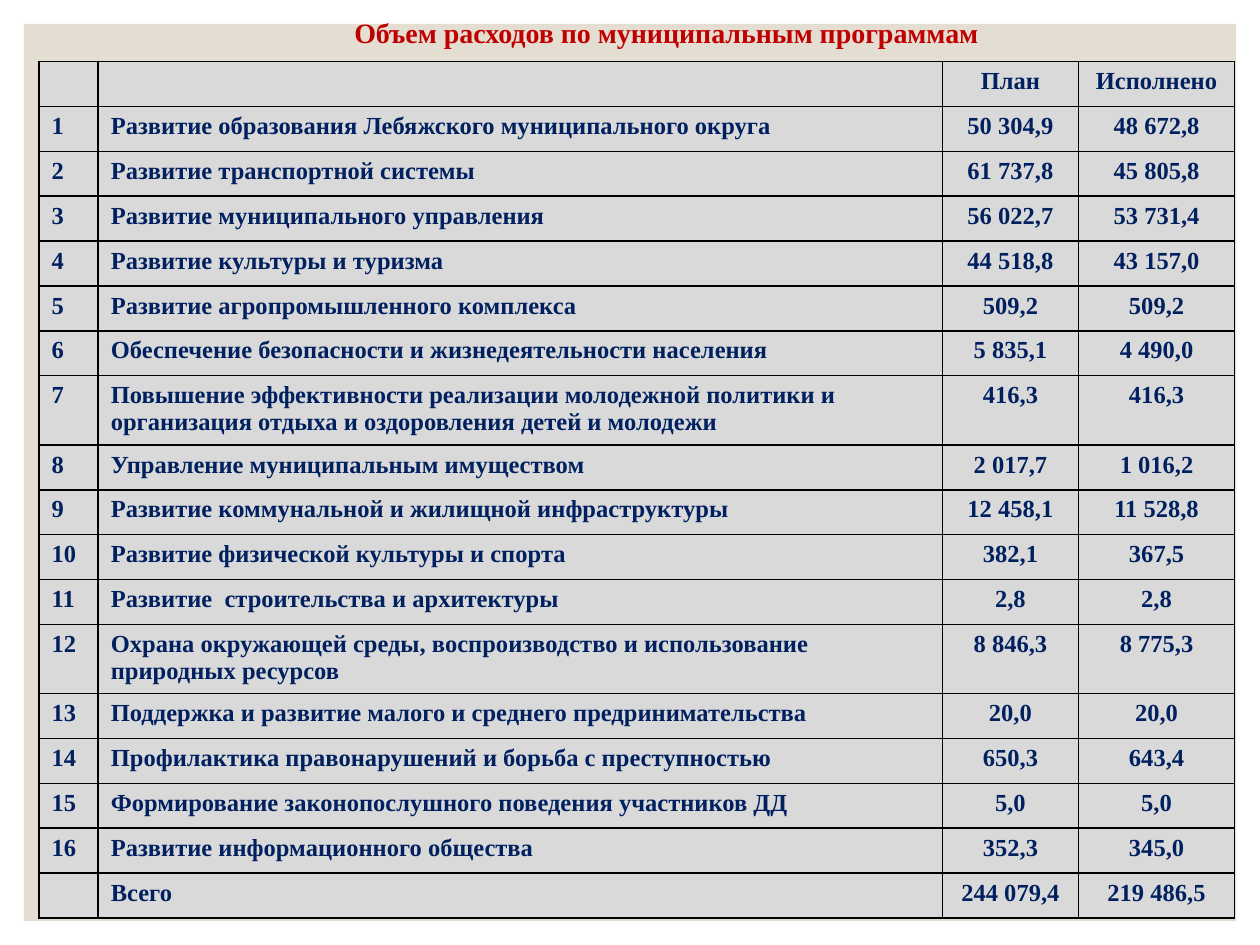
from dataclasses import dataclass

from lxml import etree
from pptx import Presentation
from pptx.dml.color import RGBColor
from pptx.enum.shapes import MSO_SHAPE
from pptx.enum.text import PP_ALIGN
from pptx.oxml.ns import qn
from pptx.util import Inches, Pt

RECTANGLE = MSO_SHAPE.RECTANGLE
LEFT, CENTER = PP_ALIGN.LEFT, PP_ALIGN.CENTER


@dataclass(frozen=True)
class Theme:
    font: str = "Times New Roman"
    panel: str = "E3DED1"
    cell: str = "D9D9D9"
    border: str = "000000"
    title: str = "C00000"
    text: str = "002060"
    title_size: int = 16
    text_size: int = 14


THEME = Theme()
TITLE = "Объем расходов по муниципальным программам"
HEADER = ("", "", "План", "Исполнено")
PROGRAMS = [
    ("Развитие образования Лебяжского муниципального округа", "50 304,9", "48 672,8"),
    ("Развитие транспортной системы", "61 737,8", "45 805,8"),
    ("Развитие муниципального управления", "56 022,7", "53 731,4"),
    ("Развитие культуры и туризма", "44 518,8", "43 157,0"),
    ("Развитие агропромышленного комплекса", "509,2", "509,2"),
    ("Обеспечение безопасности и жизнедеятельности населения", "5 835,1", "4 490,0"),
    ("Повышение эффективности реализации молодежной политики и "
     "организация отдыха и оздоровления детей и молодежи", "416,3", "416,3"),
    ("Управление муниципальным имуществом", "2 017,7", "1 016,2"),
    ("Развитие коммунальной и жилищной инфраструктуры", "12 458,1", "11 528,8"),
    ("Развитие физической культуры и спорта", "382,1", "367,5"),
    ("Развитие  строительства и архитектуры", "2,8", "2,8"),
    ("Охрана окружающей среды, воспроизводство и использование природных ресурсов",
     "8 846,3", "8 775,3"),
    ("Поддержка и развитие малого и среднего предринимательства", "20,0", "20,0"),
    ("Профилактика правонарушений и борьба с преступностью", "650,3", "643,4"),
    ("Формирование законопослушного поведения участников ДД", "5,0", "5,0"),
    ("Развитие информационного общества", "352,3", "345,0"),
]
TOTAL = ("", "Всего", "244 079,4", "219 486,5")
COLUMN_WIDTHS = (0.47, 6.7, 1.08, 1.24)
TITLE_HEIGHT = 0.39
TWO_LINE_HEIGHT = 0.55
TWO_LINE_LENGTH = 60  # longer names wrap to a second line


def add_panel(slide, left, top, width, height):
    panel = slide.shapes.add_shape(
        RECTANGLE, Inches(left), Inches(top), Inches(width), Inches(height))
    panel.shadow.inherit = False
    panel.fill.solid()
    panel.fill.fore_color.rgb = RGBColor.from_string(THEME.panel)
    panel.line.fill.background()


def set_borders(cell, drawn_sides):
    """Draw the named sides (letters of LRTB) and hide the others."""
    properties = cell._tc.get_or_add_tcPr()
    for side in "LRTB":
        line = etree.SubElement(properties, qn(f"a:ln{side}"), w=str(Pt(1)))
        if side in drawn_sides:
            fill = etree.SubElement(line, qn("a:solidFill"))
            etree.SubElement(fill, qn("a:srgbClr"), val=THEME.border)
        else:
            etree.SubElement(line, qn("a:noFill"))


def set_text(cell, text, size, color, alignment):
    cell.text_frame.text = text
    paragraph = cell.text_frame.paragraphs[0]
    paragraph.alignment = alignment
    for run in paragraph.runs:
        run.font.name = THEME.font
        run.font.size = Pt(size)
        run.font.bold = True
        run.font.color.rgb = RGBColor.from_string(color)
    if not text:  # keeps an empty cell from stretching its row
        etree.SubElement(paragraph._p, qn("a:endParaRPr"), sz=str(size * 100))


def fill_title_row(table):
    for cell in table.rows[0].cells:
        set_borders(cell, "B")
        cell.fill.background()
    table.cell(0, 1).merge(table.cell(0, 3))
    set_text(table.cell(0, 0), "", THEME.title_size, THEME.title, LEFT)
    set_text(table.cell(0, 1), TITLE, THEME.title_size, THEME.title, CENTER)


def fill_body_row(row, values):
    for column, (cell, value) in enumerate(zip(row.cells, values)):
        set_borders(cell, "LRTB")
        cell.fill.solid()
        cell.fill.fore_color.rgb = RGBColor.from_string(THEME.cell)
        set_text(cell, value, THEME.text_size, THEME.text, CENTER if column > 1 else LEFT)


def add_expense_table(slide, left, top, width, height):
    numbered = [(str(number), *program) for number, program in enumerate(PROGRAMS, 1)]
    body = [HEADER, *numbered, TOTAL]
    wraps = [len(values[1]) > TWO_LINE_LENGTH for values in body]
    single_height = ((height - TITLE_HEIGHT - TWO_LINE_HEIGHT * sum(wraps))
                     / wraps.count(False))

    table = slide.shapes.add_table(
        len(body) + 1, len(COLUMN_WIDTHS),
        Inches(left), Inches(top), Inches(width), Inches(height)).table
    table.first_row = table.horz_banding = False
    for column, column_width in zip(table.columns, COLUMN_WIDTHS):
        column.width = Inches(column_width)

    table.rows[0].height = Inches(TITLE_HEIGHT)
    fill_title_row(table)
    for index, (values, wrapped) in enumerate(zip(body, wraps), 1):
        row = table.rows[index]
        row.height = Inches(TWO_LINE_HEIGHT if wrapped else single_height)
        fill_body_row(row, values)


def main():
    presentation = Presentation()
    presentation.slide_width, presentation.slide_height = Inches(10), Inches(7.5)
    slide = presentation.slides.add_slide(presentation.slide_layouts[6])
    add_panel(slide, 0.19, 0.19, 9.62, 7.12)
    add_expense_table(slide, 0.31, 0.1, sum(COLUMN_WIDTHS), 7.19)
    presentation.save("out.pptx")


if __name__ == "__main__":
    main()
